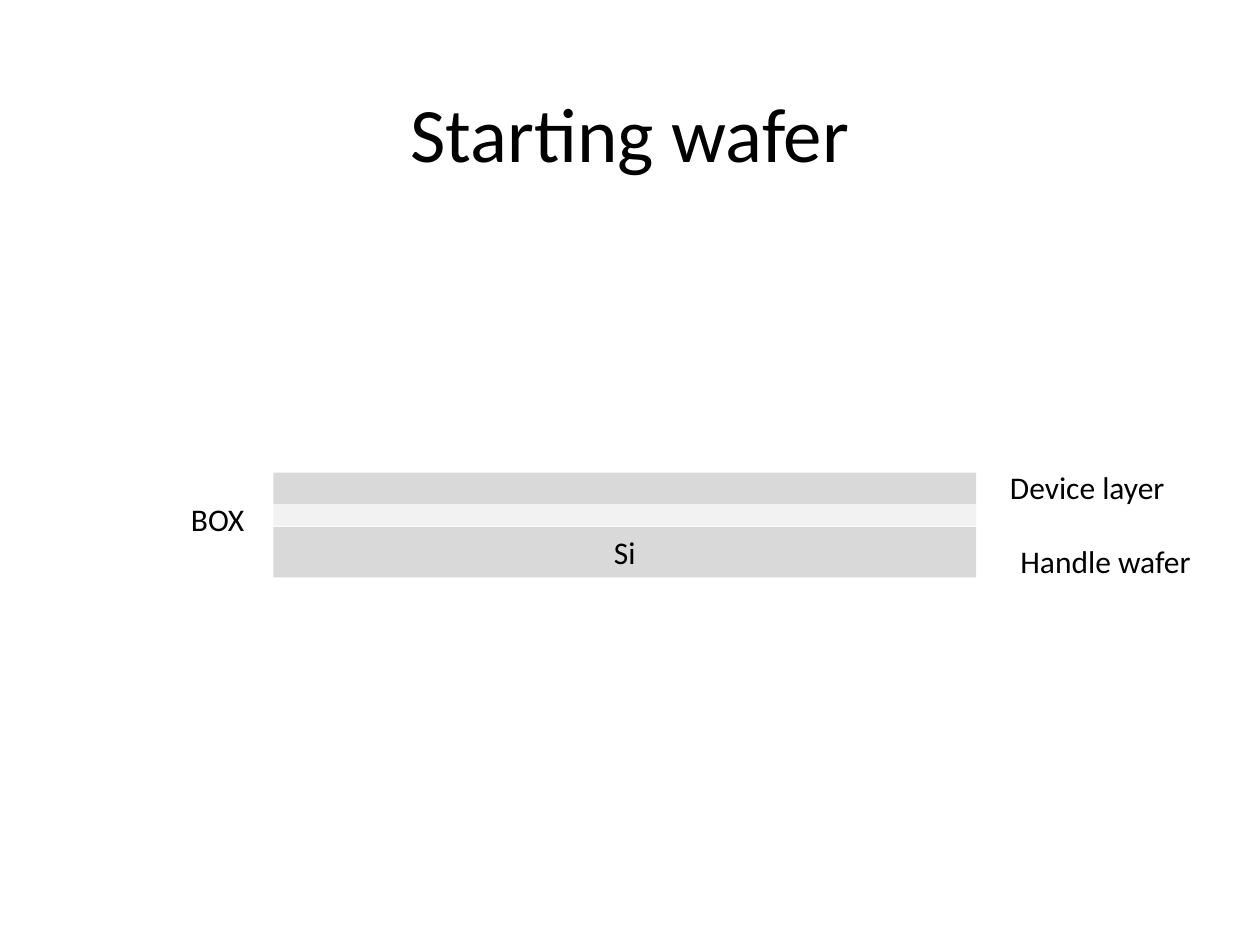
from pptx import Presentation, util as u
from pptx.dml.color import RGBColor
from pptx.enum import shapes, text

BLACK = RGBColor(0, 0, 0)
GREY = RGBColor(0xD9, 0xD9, 0xD9)
PALE = RGBColor(0xF2, 0xF2, 0xF2)
FONT = "Calibri"


def write(frame, words, size, align):
    frame.text = words
    para = frame.paragraphs[0]
    para.alignment = align
    font = para.runs[0].font
    font.name, font.size, font.color.rgb = FONT, u.Pt(size), BLACK


def head(slide, left, top, wide, high):
    title = slide.shapes.title
    title.left, title.top = u.Cm(left), u.Cm(top)
    title.width, title.height = u.Cm(wide), u.Cm(high)
    write(title.text_frame, "Starting wafer", 44, text.PP_ALIGN.CENTER)
    title.text_frame.vertical_anchor = text.MSO_ANCHOR.MIDDLE


def stack(slide, left, top, wide):
    layers = [(0, 0.64, GREY, ""), (1.09, 1.02, GREY, "Si"), (0.64, 0.43, PALE, "")]
    for drop, high, fill, words in layers:
        layer = slide.shapes.add_shape(
            shapes.MSO_SHAPE.RECTANGLE,
            u.Cm(left), u.Cm(top + drop), u.Cm(wide), u.Cm(high))
        layer.shadow.inherit = False
        layer.fill.solid()
        layer.fill.fore_color.rgb = fill
        layer.line.fill.background()
        if words:
            frame = layer.text_frame
            write(frame, words, 18, text.PP_ALIGN.CENTER)
            frame.vertical_anchor = text.MSO_ANCHOR.TOP
            frame.auto_size = text.MSO_AUTO_SIZE.SHAPE_TO_FIT_TEXT


def labels(slide, left, top):
    notes = [("BOX", 0, 0.64, 1.7), ("Handle wafer", 16.72, 1.48, 4.02),
             ("Device layer", 16.51, 0, 4.02)]
    for words, right, drop, wide in notes:
        box = slide.shapes.add_textbox(
            u.Cm(left + right), u.Cm(top + drop), u.Cm(wide), u.Cm(1.02))
        frame = box.text_frame
        frame.word_wrap = True
        frame.auto_size = text.MSO_AUTO_SIZE.SHAPE_TO_FIT_TEXT
        write(frame, words, 18, text.PP_ALIGN.LEFT)


def main():
    deck = Presentation()
    deck.slide_width, deck.slide_height = u.Cm(25.4), u.Cm(19.05)
    slide = deck.slides.add_slide(deck.slide_layouts[5])
    head(slide, 1.27, 1.07, 22.86, 3.18)
    stack(slide, 5.51, 9.53, 14.17)
    labels(slide, 3.6, 9.32)
    deck.save("out.pptx")


if __name__ == "__main__":
    main()
